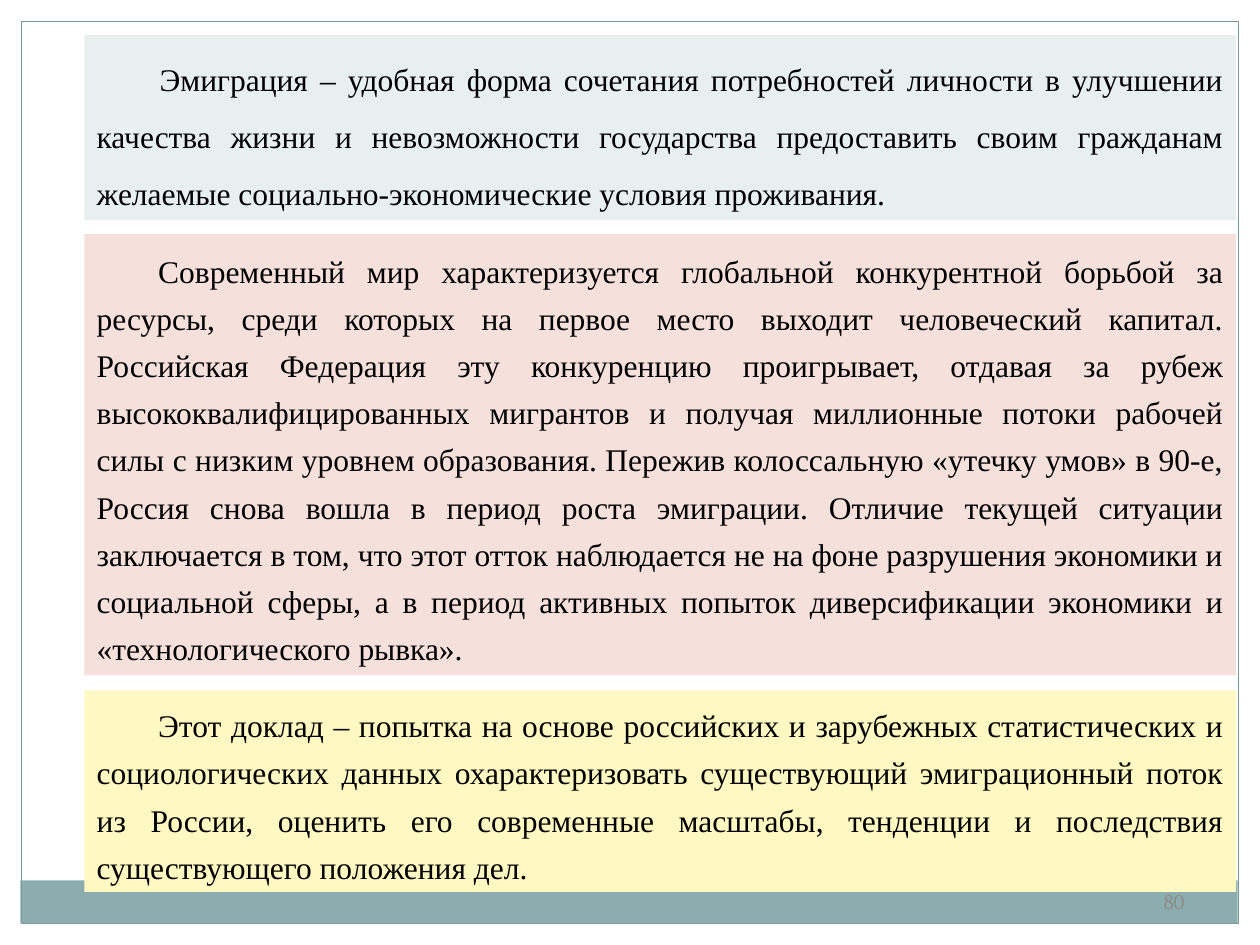
from dataclasses import dataclass
from typing import Optional

from pptx import Presentation
from pptx.dml.color import RGBColor
from pptx.enum.shapes import MSO_SHAPE
from pptx.enum.text import MSO_ANCHOR, MSO_AUTO_SIZE, PP_ALIGN
from pptx.shapes.autoshape import Shape
from pptx.slide import Slide
from pptx.util import Cm, Pt

BLACK = RGBColor(0x00, 0x00, 0x00)
GREY = RGBColor(0x8C, 0x8C, 0x8C)
TEAL = RGBColor(0x8C, 0xAD, 0xAE)
FRAME_TEAL = RGBColor(0x7C, 0x99, 0x9A)
PALE_TEAL = RGBColor(0xE8, 0xEF, 0xEF)
PALE_RED = RGBColor(0xF6, 0xE0, 0xDB)
PALE_YELLOW = RGBColor(0xFF, 0xF8, 0xC2)

PANEL_LEFT = 1.7
PANEL_WIDTH = 23.22
BODY_FONT = {"name": "Times New Roman", "size": Pt(18)}
NUMBER_FONT = {"name": "Cambria", "size": Pt(12)}


@dataclass(frozen=True)
class Area:
    left: float
    top: float
    width: float
    height: float

    def lengths(self) -> tuple[Cm, Cm, Cm, Cm]:
        return Cm(self.left), Cm(self.top), Cm(self.width), Cm(self.height)


@dataclass(frozen=True)
class Panel:
    top: float
    height: float
    fill: RGBColor
    text: str
    indent: float = 1.24
    line_spacing: float = 1.25
    anchor: MSO_ANCHOR = MSO_ANCHOR.MIDDLE


PANELS = [
    Panel(
        13.92, 4.06, PALE_YELLOW,
        "Этот доклад – попытка на основе российских и зарубежных статистических и "
        "социологических данных охарактеризовать существующий эмиграционный поток "
        "из России, оценить его современные масштабы, тенденции и последствия "
        "существующего положения дел.",
    ),
    Panel(
        4.72, 8.89, PALE_RED,
        "Современный мир характеризуется глобальной конкурентной борьбой за "
        "ресурсы, среди которых на первое место выходит человеческий капитал. "
        "Российская Федерация эту конкуренцию проигрывает, отдавая за рубеж "
        "высококвалифицированных мигрантов и получая миллионные потоки рабочей "
        "силы с низким уровнем образования. Пережив колоссальную «утечку умов» в "
        "90-е, Россия снова вошла в период роста эмиграции. Отличие текущей "
        "ситуации заключается в том, что этот отток наблюдается не на фоне "
        "разрушения экономики и социальной сферы, а в период активных попыток "
        "диверсификации экономики и «технологического рывка».",
    ),
    Panel(
        0.71, 3.73, PALE_TEAL,
        "Эмиграция – удобная форма сочетания потребностей личности в улучшении "
        "качества жизни и невозможности государства предоставить своим гражданам "
        "желаемые социально-экономические условия проживания.",
        indent=1.27, line_spacing=1.5, anchor=MSO_ANCHOR.TOP,
    ),
]


def apply_format(target: object, values: dict[str, object]) -> None:
    for name, value in values.items():
        setattr(target, name, value)


def add_rectangle(page: Slide, area: Area, fill: Optional[RGBColor] = None,
                  line: Optional[RGBColor] = None) -> Shape:
    box = page.shapes.add_shape(MSO_SHAPE.RECTANGLE, *area.lengths())
    box.shadow.inherit = False
    if fill is None:
        box.fill.background()
    else:
        box.fill.solid()
        box.fill.fore_color.rgb = fill
    if line is None:
        box.line.fill.background()
    else:
        box.line.color.rgb = line
        box.line.width = Pt(0.75)
    return box


def write_text(box: Shape, text: str, frame_format: dict[str, object],
               para_format: dict[str, object], font_format: dict[str, object],
               color: RGBColor, indent: float = 0) -> None:
    apply_format(box.text_frame, {"word_wrap": True, **frame_format})
    para = box.text_frame.paragraphs[0]
    apply_format(para, para_format)
    if indent:
        properties = para._p.get_or_add_pPr()
        properties.set("marL", "0")
        properties.set("indent", str(int(Cm(indent))))
    span = para.add_run()
    span.text = text
    apply_format(span.font, font_format)
    span.font.color.rgb = color


def add_panel(page: Slide, panel: Panel) -> None:
    area = Area(PANEL_LEFT, panel.top, PANEL_WIDTH, panel.height)
    box = add_rectangle(page, area, fill=panel.fill)
    frame_format = {
        "vertical_anchor": panel.anchor,
        "auto_size": MSO_AUTO_SIZE.SHAPE_TO_FIT_TEXT,
    }
    para_format = {"alignment": PP_ALIGN.JUSTIFY, "line_spacing": panel.line_spacing}
    write_text(box, panel.text, frame_format, para_format, BODY_FONT, BLACK, panel.indent)


def add_page_number(page: Slide, number: str) -> None:
    box = page.shapes.add_textbox(*Area(18.21, 17.65, 5.92, 1.02).lengths())
    write_text(box, number, {"vertical_anchor": MSO_ANCHOR.MIDDLE},
               {"alignment": PP_ALIGN.RIGHT}, NUMBER_FONT, GREY)


def main() -> None:
    deck = Presentation()
    apply_format(deck, {"slide_width": Cm(25.4), "slide_height": Cm(19.05)})
    page = deck.slides.add_slide(deck.slide_layouts[6])
    add_rectangle(page, Area(0.41, 17.75, 24.54, 0.86), fill=TEAL)
    add_rectangle(page, Area(0.43, 0.43, 24.54, 18.19), line=FRAME_TEAL)
    for panel in PANELS:
        add_panel(page, panel)
    add_page_number(page, "80")
    deck.save("out.pptx")


if __name__ == "__main__":
    main()
